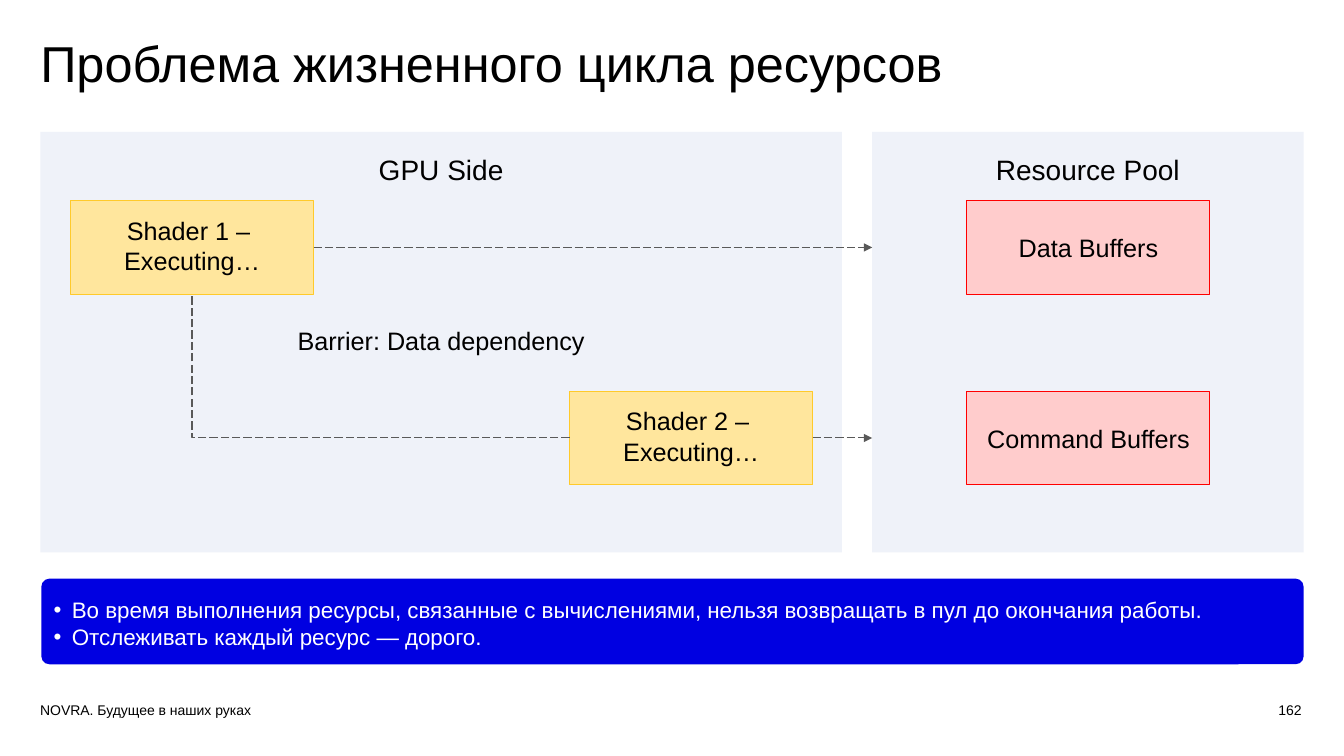
from lxml import etree
from pptx import Presentation
from pptx.dml.color import RGBColor
from pptx.enum.dml import MSO_LINE
from pptx.enum.shapes import MSO_CONNECTOR, MSO_SHAPE
from pptx.enum.text import MSO_ANCHOR, PP_ALIGN
from pptx.oxml.ns import qn
from pptx.util import Inches, Pt

RECT, ROUNDED = MSO_SHAPE.RECTANGLE, MSO_SHAPE.ROUNDED_RECTANGLE
STRAIGHT, ELBOW = MSO_CONNECTOR.STRAIGHT, MSO_CONNECTOR.ELBOW
LEFT, CENTER, RIGHT = PP_ALIGN.LEFT, PP_ALIGN.CENTER, PP_ALIGN.RIGHT
TOP, MIDDLE = MSO_ANCHOR.TOP, MSO_ANCHOR.MIDDLE
LONG_DASH = MSO_LINE.LONG_DASH

DEFAULT_INSETS = (0.1, 0.05, 0.1, 0.05)
PANEL_INSETS = (0.2, 0.2, 0.2, 0.2)
SHADER_INSETS = (0.2, 0.16, 0.2, 0.2)


def color(hex_value):
    return RGBColor.from_string(hex_value)


class SlideBuilder:
    font = "Arial"
    black, white = "000000", "FFFFFF"
    panel_fill, note_fill = "EFF2F9", "0000E1"
    arrow_color = "595959"
    line_width = 0.75
    bullet_indent = 0.18

    def __init__(self, slide):
        self.slide = slide

    def fill_text(self, shape, lines, size, text_color=black, align=LEFT, anchor=TOP,
                  insets=DEFAULT_INSETS, wrap=True, bullets=False, spacing=None):
        frame = shape.text_frame
        frame_format = {"word_wrap": wrap, "vertical_anchor": anchor}
        sides = ("margin_left", "margin_top", "margin_right", "margin_bottom")
        frame_format.update(zip(sides, map(Inches, insets)))
        for name, value in frame_format.items():
            setattr(frame, name, value)
        for index, line in enumerate(lines):
            paragraph = frame.add_paragraph() if index else frame.paragraphs[0]
            paragraph.text = line
            if bullets:
                self.add_bullet(paragraph)
            paragraph.alignment = align
            if spacing:
                paragraph.line_spacing = spacing
            for run in paragraph.runs:
                for name, value in {"name": self.font, "size": Pt(size)}.items():
                    setattr(run.font, name, value)
                run.font.color.rgb = color(text_color)

    def add_bullet(self, paragraph):
        properties = paragraph._p.get_or_add_pPr()
        indent = Inches(self.bullet_indent)
        properties.set("marL", str(indent))
        properties.set("indent", str(-indent))
        etree.SubElement(properties, qn("a:buFont"), typeface=self.font)
        etree.SubElement(properties, qn("a:buChar"), char="•")

    def text(self, box, line, size, **style):
        shape = self.slide.shapes.add_textbox(*map(Inches, box))
        self.fill_text(shape, [line], size, **style)

    def block(self, box, lines, size, fill, outline=None, kind=RECT, **style):
        shape = self.slide.shapes.add_shape(kind, *map(Inches, box))
        shape.shadow.inherit = False
        shape.fill.solid()
        shape.fill.fore_color.rgb = color(fill)
        if outline:
            shape.line.color.rgb = color(outline)
            shape.line.width = Pt(self.line_width)
        else:
            shape.line.fill.background()
        self.fill_text(shape, lines, size, **style)
        return shape

    def panel(self, box, heading):
        self.block(box, [heading], 20, self.panel_fill, align=CENTER, insets=PANEL_INSETS)

    def node(self, box, label, fill, outline, insets=DEFAULT_INSETS):
        self.block(box, [label], 18, fill, outline, align=CENTER, anchor=MIDDLE, insets=insets)

    def link(self, start, end, kind=STRAIGHT, arrow=True):
        connector = self.slide.shapes.add_connector(kind, *map(Inches, start + end))
        connector.line.color.rgb = color(self.arrow_color)
        connector.line.width = Pt(self.line_width)
        connector.line.dash_style = LONG_DASH
        properties = connector._element.spPr
        if kind == ELBOW:
            # A single right-angle turn instead of the default two
            properties.find(qn("a:prstGeom")).set("prst", "bentConnector2")
        if arrow:
            outline = properties.find(qn("a:ln"))
            etree.SubElement(outline, qn("a:tailEnd"), type="triangle")
        etree.SubElement(properties, qn("a:effectLst"))


def main():
    presentation = Presentation()
    presentation.slide_width = Inches(13.33)
    presentation.slide_height = Inches(7.5)
    builder = SlideBuilder(presentation.slides.add_slide(presentation.slide_layouts[6]))

    builder.text((0.4, 0.34, 10.9, 0.83), "Проблема жизненного цикла ресурсов", 36,
                 insets=(0, 0.05, 0.1, 0.05), spacing=0.9)

    panel_top, panel_height = 1.31, 4.17
    gpu_left, gpu_width = 0.4, 7.95
    pool_left, pool_width = 8.65, 4.28
    builder.panel((gpu_left, panel_top, gpu_width, panel_height), "GPU Side")
    builder.panel((pool_left, panel_top, pool_width, panel_height), "Resource Pool")

    node_width, node_height = 2.41, 0.93
    buffer_left = 9.59
    rows = (
        (1.99, 0.7, "Shader 1 – \vExecuting…", "Data Buffers"),
        (3.88, 5.65, "Shader 2 – \vExecuting…", "Command Buffers"),
    )
    for top, shader_left, shader, buffers in rows:
        builder.node((shader_left, top, node_width, node_height), shader,
                     "FFE69D", "FFCA2B", SHADER_INSETS)
        builder.node((buffer_left, top, node_width, node_height), buffers, "FFCCCC", "FF0000")
        middle = top + node_height / 2
        builder.link((shader_left + node_width, middle), (pool_left, middle))

    (first_top, first_left, *_), (second_top, second_left, *_) = rows
    builder.link((second_left, second_top + node_height / 2),
                 (first_left + node_width / 2, first_top + node_height),
                 kind=ELBOW, arrow=False)
    builder.text((gpu_left, 3.18, gpu_width, 0.4), "Barrier: Data dependency", 18, align=CENTER)

    conclusions = (
        "Во время выполнения ресурсы, связанные с вычислениями, "
        "нельзя возвращать в пул до окончания работы.",
        "Отслеживать каждый ресурс — дорого.",
    )
    note = builder.block((0.41, 5.74, 12.52, 0.85), conclusions, 16, builder.note_fill,
                         kind=ROUNDED, text_color=builder.white, anchor=MIDDLE,
                         insets=(0.1, 0.08, 0.1, 0.05), bullets=True)
    note.adjustments[0] = 0.095

    builder.text((0.3, 6.91, 2.3, 0.27), "NOVRA. Будущее в наших руках", 10, wrap=False)
    builder.text((9.61, 6.91, 3.3, 0.4), "162", 10, align=RIGHT, insets=(0.1, 0.05, 0, 0.05))

    presentation.save("out.pptx")


if __name__ == "__main__":
    main()
